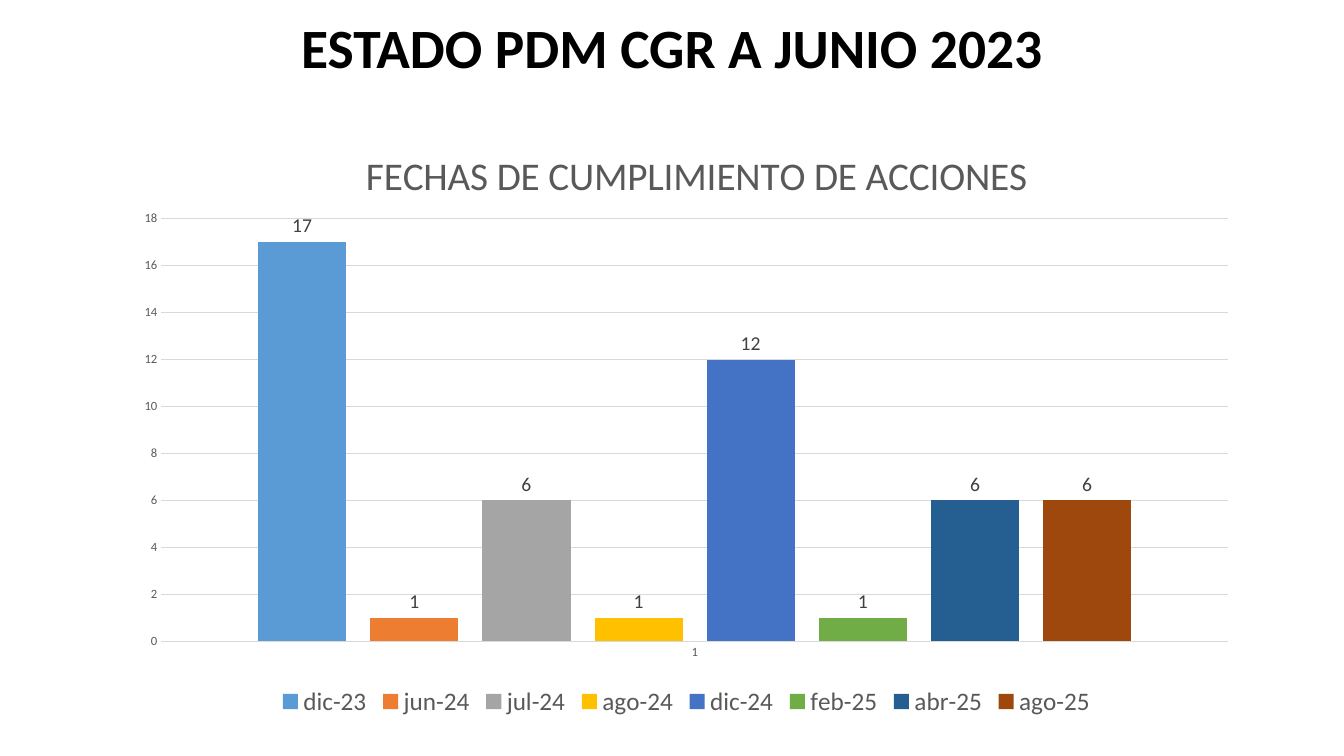
from lxml import etree
from pptx import Presentation
from pptx import util as u
from pptx.chart.data import CategoryChartData
from pptx.dml.color import RGBColor
from pptx.enum import chart as ch, text
from pptx.oxml.ns import qn

FONT = "Calibri"
GREY = "595959"
RULE = "D9D9D9"
ACTIONS = [
    ("dic-23", 17, "5B9BD5"),
    ("jun-24", 1, "ED7D31"),
    ("jul-24", 6, "A5A5A5"),
    ("ago-24", 1, "FFC000"),
    ("dic-24", 12, "4472C4"),
    ("feb-25", 1, "70AD47"),
    ("abr-25", 6, "255E91"),
    ("ago-25", 6, "9E480E"),
]


def color(value):
    return RGBColor.from_string(value)


def set_all(target, values):
    for name, value in values.items():
        setattr(target, name, value)


def format_font(font, size, hex_color, bold=False):
    set_all(font, {"name": FONT, "size": u.Pt(size), "bold": bold})
    font.color.rgb = color(hex_color)


def format_line(line, hex_color):
    line.color.rgb = color(hex_color)
    line.width = u.Pt(0.75)


def place(element, index, **fractions):
    """Fix a chart part's layout, in fractions of the chart's size."""
    for old in element.findall(qn("c:layout")):
        element.remove(old)
    layout = etree.Element(qn("c:layout"))
    manual = etree.SubElement(layout, qn("c:manualLayout"))
    if "w" in fractions:
        etree.SubElement(manual, qn("c:layoutTarget")).set("val", "inner")
    for name in ("xMode", "yMode"):
        etree.SubElement(manual, qn("c:" + name)).set("val", "edge")
    for name, value in fractions.items():
        etree.SubElement(manual, qn("c:" + name)).set("val", str(value))
    element.insert(index, layout)


def add_heading(slide, words):
    box = slide.shapes.add_textbox(u.Cm(2.33), u.Cm(0.36), u.Cm(29.21), u.Cm(1.85))
    set_all(box.text_frame, {"word_wrap": True, "vertical_anchor": text.MSO_ANCHOR.MIDDLE})
    paragraph = box.text_frame.paragraphs[0]
    set_all(paragraph, {"text": words, "alignment": text.PP_ALIGN.CENTER, "line_spacing": 0.9})
    format_font(paragraph.runs[0].font, 39.6, "000000", bold=True)


def format_axes(chart):
    for axis in (chart.category_axis, chart.value_axis):
        set_all(axis, {"major_tick_mark": ch.XL_TICK_MARK.NONE,
                       "minor_tick_mark": ch.XL_TICK_MARK.NONE})
        format_font(axis.tick_labels.font, 9, GREY)
    format_line(chart.category_axis.format.line, RULE)
    set_all(chart.value_axis, {"minimum_scale": 0, "maximum_scale": 18, "major_unit": 2})
    chart.value_axis.format.line.fill.background()
    format_line(chart.value_axis.major_gridlines.format.line, RULE)


def format_series(series, hex_color):
    series.format.fill.solid()
    series.format.fill.fore_color.rgb = color(hex_color)
    labels = series.data_labels
    set_all(labels, {"show_value": True, "position": ch.XL_LABEL_POSITION.OUTSIDE_END})
    format_font(labels.font, 14, "404040")


def add_chart(slide, title):
    data = CategoryChartData()
    data.categories = ["1"]
    for month, count, _ in ACTIONS:
        data.add_series(month, [count])
    chart = slide.shapes.add_chart(
        ch.XL_CHART_TYPE.COLUMN_CLUSTERED,
        u.Cm(3.07), u.Cm(2.82), u.Cm(28.45), u.Cm(15.37), data).chart
    format_font(chart.font, 10, "000000")

    paragraph = chart.chart_title.text_frame.paragraphs[0]
    paragraph.text = title
    format_font(paragraph.runs[0].font, 28, GREY)
    chart.chart_title.include_in_layout = False

    chart.has_legend = True
    set_all(chart.legend, {"position": ch.XL_LEGEND_POSITION.BOTTOM, "include_in_layout": False})
    format_font(chart.legend.font, 18, GREY)

    format_axes(chart)
    plot = chart.plots[0]
    set_all(plot, {"gap_width": 219, "overlap": -27, "vary_by_categories": False})
    for series, (_, _, hex_color) in zip(plot.series, ACTIONS):
        format_series(series, hex_color)

    chart_root = chart.element.find(qn("c:chart"))
    place(chart_root.find(qn("c:title")), 1, x=0.21, y=0.05)
    place(chart_root.find(qn("c:plotArea")), 0, x=0.035, y=0.175, w=0.945, h=0.693)


def main():
    presentation = Presentation()
    set_all(presentation, {"slide_width": u.Cm(33.87), "slide_height": u.Cm(19.05)})
    slide = presentation.slides.add_slide(presentation.slide_layouts[6])
    add_heading(slide, "ESTADO PDM CGR A JUNIO 2023")
    add_chart(slide, "FECHAS DE CUMPLIMIENTO DE ACCIONES")
    presentation.save("out.pptx")


if __name__ == "__main__":
    main()
